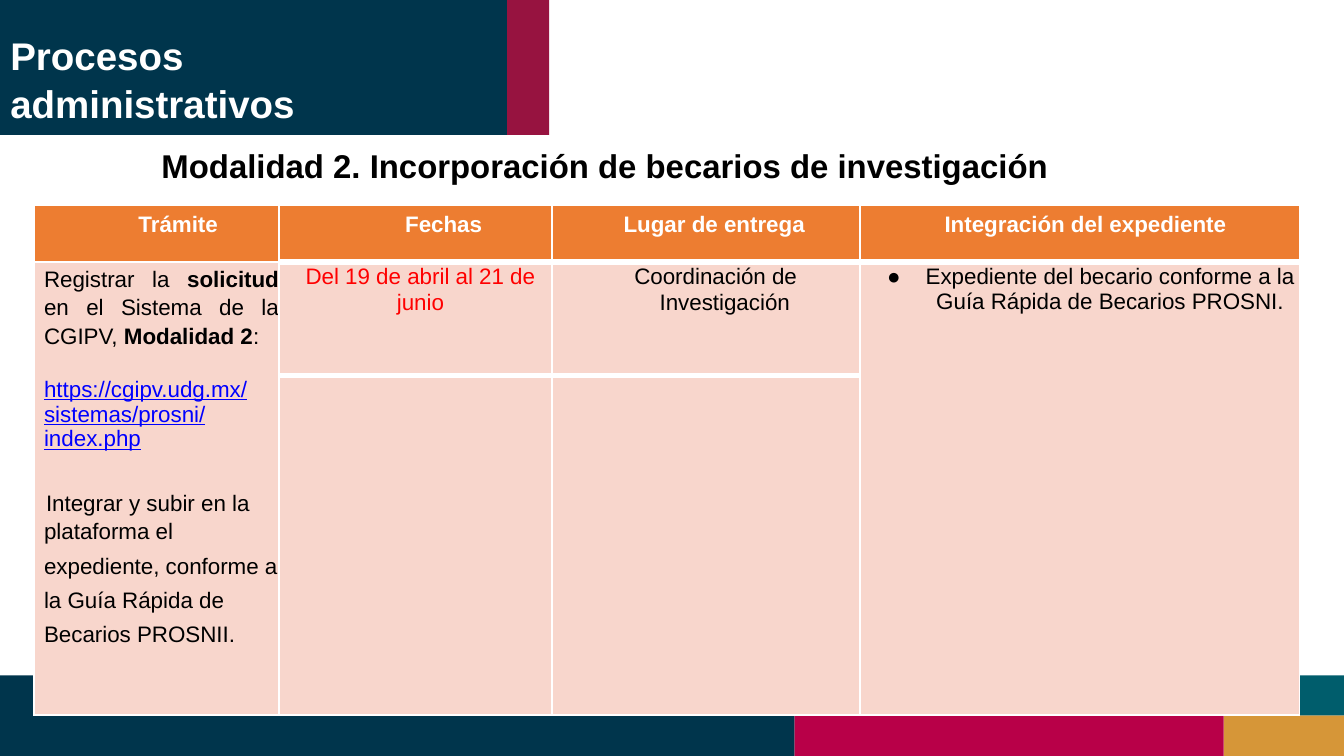
from dataclasses import dataclass
from typing import Optional

from lxml import etree
from pptx import Presentation, util as u
from pptx.dml.color import RGBColor
from pptx.enum import shapes, text
from pptx.oxml.ns import qn


@dataclass(frozen=True)
class Theme:
    font: str = "Arial"
    navy: str = "00354C"
    wine: str = "971340"
    magenta: str = "B80048"
    teal: str = "005D6C"
    gold: str = "D69638"
    orange: str = "ED7D31"
    pink: str = "F8D6CC"
    white: str = "FFFFFF"
    black: str = "000000"
    red: str = "FF0000"
    link: str = "0000FF"
    title_size: float = 27.5
    subtitle_size: float = 23.5
    body_size: float = 16
    thin: float = 1.5
    thick: float = 4.25


THEME = Theme()


@dataclass(frozen=True)
class Band:
    left: float
    top: float
    width: float
    height: float
    color: str


@dataclass(frozen=True)
class Span:
    words: str
    bold: bool = False
    color: str = THEME.black
    size: float = THEME.body_size
    underline: bool = False


@dataclass(frozen=True)
class Para:
    spans: tuple[Span, ...]
    align: text.PP_ALIGN = text.PP_ALIGN.LEFT
    margin: float = 0
    indent: float = 0
    spacing: float = 1.0
    before: float = 0
    bullet: Optional[str] = None


@dataclass(frozen=True)
class Entry:
    row: int
    column: int
    paras: tuple[Para, ...]
    top_inset: float = 0.03


CENTER, JUSTIFY = text.PP_ALIGN.CENTER, text.PP_ALIGN.JUSTIFY
SLIDE_WIDTH, SLIDE_HEIGHT = 33.87, 19.05
HEADER_SPLIT, HEADER_HEIGHT = 12.78, 3.4
FOOTER_TOP, FOOTER_MIDDLE = 17.02, 18.03
FOOTER_SPLIT, GOLD_LEFT = 20.02, 30.84
STRIP = SLIDE_HEIGHT - FOOTER_MIDDLE

BANDS = [
    Band(0, 0, HEADER_SPLIT, HEADER_HEIGHT, THEME.navy),
    Band(GOLD_LEFT, FOOTER_MIDDLE, SLIDE_WIDTH - GOLD_LEFT, STRIP, THEME.gold),
    Band(FOOTER_SPLIT, FOOTER_MIDDLE, GOLD_LEFT - FOOTER_SPLIT, STRIP, THEME.magenta),
    Band(FOOTER_SPLIT, FOOTER_TOP, SLIDE_WIDTH - FOOTER_SPLIT,
         FOOTER_MIDDLE - FOOTER_TOP, THEME.teal),
    Band(HEADER_SPLIT, 0, 1.06, HEADER_HEIGHT, THEME.wine),
    Band(0, FOOTER_TOP, FOOTER_SPLIT, SLIDE_HEIGHT - FOOTER_TOP, THEME.navy),
]

COLUMN_WIDTHS = [6.17, 6.88, 7.77, 11.07]
ROW_HEIGHTS = [1.42, 2.87, 2.72, 0.86, 3.51, 1.45]
LAST_ROW, LAST_COLUMN = len(ROW_HEIGHTS) - 1, len(COLUMN_WIDTHS) - 1
HEADINGS = [("Trámite", 1.09), ("Fechas", 1.42), ("Lugar de entrega", 0.41),
            ("Integración del expediente", 0.28)]

ENTRIES = [
    Entry(0, column, (Para((Span(words, True, THEME.white),), CENTER, margin, spacing=1.27),), 0)
    for column, (words, margin) in enumerate(HEADINGS)
] + [
    Entry(1, 0, (Para((Span("Registrar la "), Span("solicitud ", True),
                       Span("en el Sistema de la CGIPV, "), Span("Modalidad 2", True),
                       Span(":")), JUSTIFY, 0.25, spacing=1.15),)),
    Entry(1, 1, (Para((Span("Del 19 de abril al 21 de junio", color=THEME.red),),
                      CENTER, 0.25, spacing=1.04),)),
    Entry(1, 2, (Para((Span("Coordinación de Investigación"),),
                      CENTER, 0.94, -0.46, 1.04),)),
    Entry(1, 3, (Para((Span("Expediente del becario conforme a la Guía Rápida de "
                            "Becarios PROSNI."),),
                      CENTER, 1.52, -0.97, 1.01, bullet="●"),), 0.05),
    Entry(2, 0, (Para((Span("https://cgipv.udg.mx/sistemas/prosni/index.php",
                            color=THEME.link, underline=True),), JUSTIFY, 0.25),)),
    Entry(3, 0, (Para((Span("Integrar y subir en la"),), JUSTIFY, 0.3),), 0.18),
    Entry(4, 0, (Para((Span("plataforma el"),), JUSTIFY, 0.25),
                 Para((Span("expediente, conforme a la Guía Rápida de Becarios PROSNII."),),
                      margin=0.25, spacing=1.37, before=0.8))),
]


def rgb(color: str) -> RGBColor:
    return RGBColor.from_string(color)


def draw_band(slide, band: Band) -> None:
    strip = slide.shapes.add_shape(
        shapes.MSO_SHAPE.RECTANGLE,
        *(u.Cm(side) for side in (band.left, band.top, band.width, band.height)))
    strip.shadow.inherit = False
    strip.fill.solid()
    strip.fill.fore_color.rgb = rgb(band.color)
    strip.line.fill.background()


def write(frame, paras: tuple[Para, ...]) -> None:
    for position, para in enumerate(paras):
        line = frame.add_paragraph() if position else frame.paragraphs[0]
        layout = line._p.get_or_add_pPr()
        layout.set("marL", str(u.Cm(para.margin)))
        layout.set("indent", str(u.Cm(para.indent)))
        if para.bullet:
            tint = etree.SubElement(layout, qn("a:buClr"))
            etree.SubElement(tint, qn("a:srgbClr"), val=THEME.black)
            etree.SubElement(layout, qn("a:buFont"), typeface=THEME.font)
            etree.SubElement(layout, qn("a:buChar"), char=para.bullet)
        line.alignment = para.align
        line.line_spacing = para.spacing
        line.space_before = u.Pt(para.before)
        for span in para.spans:
            run = line.add_run()
            run.text = span.words
            run.font.name = THEME.font
            run.font.size = u.Pt(span.size)
            run.font.bold = span.bold
            run.font.underline = span.underline
            run.font.color.rgb = rgb(span.color)


def place_heading(heading, left: float, top: float, width: float, height: float,
                  para: Para) -> None:
    heading.left, heading.top = u.Cm(left), u.Cm(top)
    heading.width, heading.height = u.Cm(width), u.Cm(height)
    frame = heading.text_frame
    frame.word_wrap = True
    frame.auto_size = text.MSO_AUTO_SIZE.SHAPE_TO_FIT_TEXT
    frame.vertical_anchor = text.MSO_ANCHOR.TOP
    frame.margin_left = frame.margin_right = frame.margin_bottom = 0
    frame.margin_top = u.Cm(0.03)
    write(frame, (para,))


def rule_cell(cell, row: int, column: int) -> None:
    beside = THEME.thin if column == 0 else THEME.thick
    top = {0: THEME.thin, 1: beside}.get(row, 0)
    bottom = {0: beside, LAST_ROW: THEME.thin}.get(row, 0)
    if column in (1, 2):
        top = THEME.thick if row == 2 else top
        bottom = THEME.thick if row == 1 else bottom
    if column == LAST_COLUMN and row == 1:
        bottom = THEME.thin
    edges = {"a:lnL": THEME.thin, "a:lnR": THEME.thin, "a:lnT": top, "a:lnB": bottom}
    properties = cell._tc.get_or_add_tcPr()
    for position, (tag, weight) in enumerate(edges.items()):
        edge = etree.Element(qn(tag), w=str(u.Pt(weight)))
        if weight:
            paint = etree.SubElement(edge, qn("a:solidFill"))
            etree.SubElement(paint, qn("a:srgbClr"), val=THEME.white)
        else:
            etree.SubElement(edge, qn("a:noFill"))
        properties.insert(position, edge)


def draw_procedures(slide) -> None:
    procedures = slide.shapes.add_table(
        len(ROW_HEIGHTS), len(COLUMN_WIDTHS), u.Cm(0.86), u.Cm(5.18),
        u.Cm(sum(COLUMN_WIDTHS)), u.Cm(sum(ROW_HEIGHTS))).table
    procedures.first_row = procedures.horz_banding = False
    for column, width in zip(procedures.columns, COLUMN_WIDTHS):
        column.width = u.Cm(width)
    for row, height in zip(procedures.rows, ROW_HEIGHTS):
        row.height = u.Cm(height)
    procedures.cell(1, LAST_COLUMN).merge(procedures.cell(LAST_ROW, LAST_COLUMN))
    for row in range(len(ROW_HEIGHTS)):
        for column in range(len(COLUMN_WIDTHS)):
            cell = procedures.cell(row, column)
            cell.margin_left = cell.margin_right = cell.margin_top = cell.margin_bottom = 0
            cell.fill.solid()
            cell.fill.fore_color.rgb = rgb(THEME.pink if row else THEME.orange)
            rule_cell(cell, row, column)
    for entry in ENTRIES:
        cell = procedures.cell(entry.row, entry.column)
        cell.margin_top = u.Cm(entry.top_inset)
        write(cell.text_frame, entry.paras)


def main() -> None:
    deck = Presentation()
    deck.slide_width, deck.slide_height = u.Cm(SLIDE_WIDTH), u.Cm(SLIDE_HEIGHT)
    slide = deck.slides.add_slide(deck.slide_layouts[5])
    for band in BANDS:
        draw_band(slide, band)
    title = slide.shapes.title
    title._element.getparent().append(title._element)
    place_heading(title, 0.23, 0.74, 11.02, 2.39, Para(
        (Span("Procesos administrativos", True, THEME.white, THEME.title_size),),
        margin=0.03, spacing=1.04))
    draw_procedures(slide)
    modality = slide.shapes.add_textbox(0, 0, 0, 0)
    place_heading(modality, 4.04, 3.63, 23.22, 1.04, Para(
        (Span("Modalidad 2. Incorporación de becarios de investigación", True,
              size=THEME.subtitle_size),), margin=0.03))
    deck.save("out.pptx")


if __name__ == "__main__":
    main()
